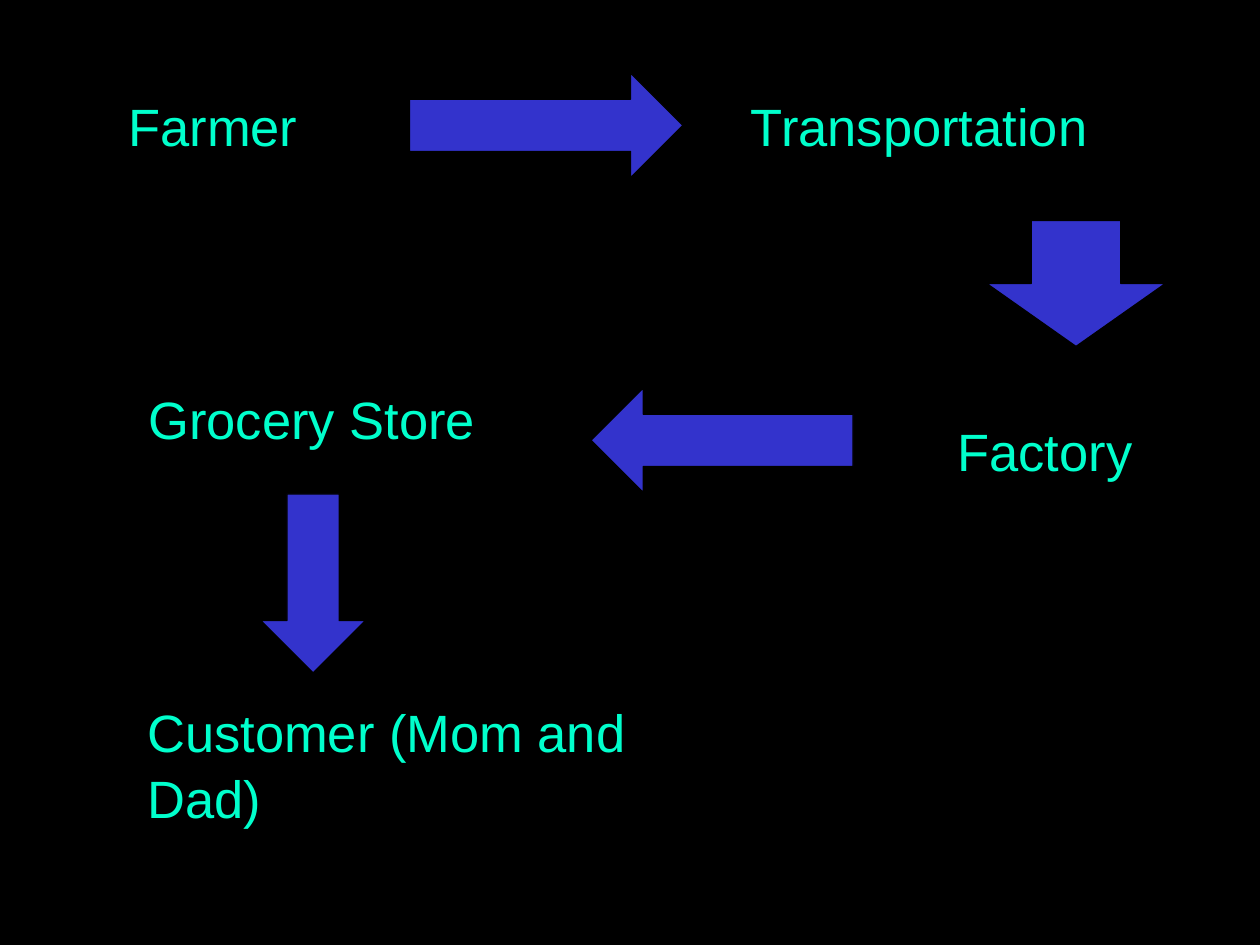
from pptx import Presentation
from pptx.dml.color import RGBColor
from pptx.enum.shapes import MSO_SHAPE as Shape
from pptx.enum.text import MSO_ANCHOR as Anchor, PP_ALIGN as Align
from pptx.util import Inches, Pt

COLORS = {"background": "000000", "label": "00FFCC", "arrow": "3333CC", "outline": "000000"}


def rgb(name):
    return RGBColor.from_string(COLORS[name])


class SupplyChainSlide:
    """Holds the style and the slide that the elements are added to."""

    label_font = {"name": "Arial", "size": Pt(30)}
    label_frame = {"word_wrap": True, "vertical_anchor": Anchor.TOP}
    line_spacing = 1.05

    def __init__(self, presentation):
        self.slide = presentation.slides.add_slide(presentation.slide_layouts[6])
        background = self.slide.background.fill
        background.solid()
        background.fore_color.rgb = rgb("background")

    def label(self, text, box, align=Align.LEFT):
        frame = self.slide.shapes.add_textbox(*map(Inches, box)).text_frame
        for attribute, value in self.label_frame.items():
            setattr(frame, attribute, value)
        paragraph = frame.paragraphs[0]
        paragraph.alignment = align
        paragraph.line_spacing = self.line_spacing
        run = paragraph.add_run()
        run.text = text
        for attribute, value in self.label_font.items():
            setattr(run.font, attribute, value)
        run.font.color.rgb = rgb("label")

    def arrow(self, direction, box):
        arrow = self.slide.shapes.add_shape(direction, *map(Inches, box))
        arrow.shadow.inherit = False
        arrow.fill.solid()
        arrow.fill.fore_color.rgb = rgb("arrow")
        arrow.line.color.rgb = rgb("outline")
        arrow.line.width = Pt(0.75)


def main():
    presentation = Presentation()
    presentation.slide_width, presentation.slide_height = Inches(10), Inches(7.5)
    chain = SupplyChainSlide(presentation)

    chain.label("Farmer", (0.92, 0.67, 2.12, 0.5))
    chain.label("Transportation", (5.42, 0.67, 3.75, 0.9), Align.CENTER)
    chain.label("Factory", (7.5, 3.25, 1.98, 0.5))
    chain.label("Grocery Store", (0.27, 3, 4.41, 0.5), Align.CENTER)
    chain.label("Customer (Mom and Dad)", (1.07, 5.48, 4.53, 0.8))

    chain.arrow(Shape.RIGHT_ARROW, (3.25, 0.58, 2.17, 0.83))
    chain.arrow(Shape.DOWN_ARROW, (7.83, 1.75, 1.42, 1))
    chain.arrow(Shape.LEFT_ARROW, (4.69, 3.08, 2.08, 0.83))
    chain.arrow(Shape.DOWN_ARROW, (2.07, 3.92, 0.83, 1.42))

    presentation.save("out.pptx")


if __name__ == "__main__":
    main()
